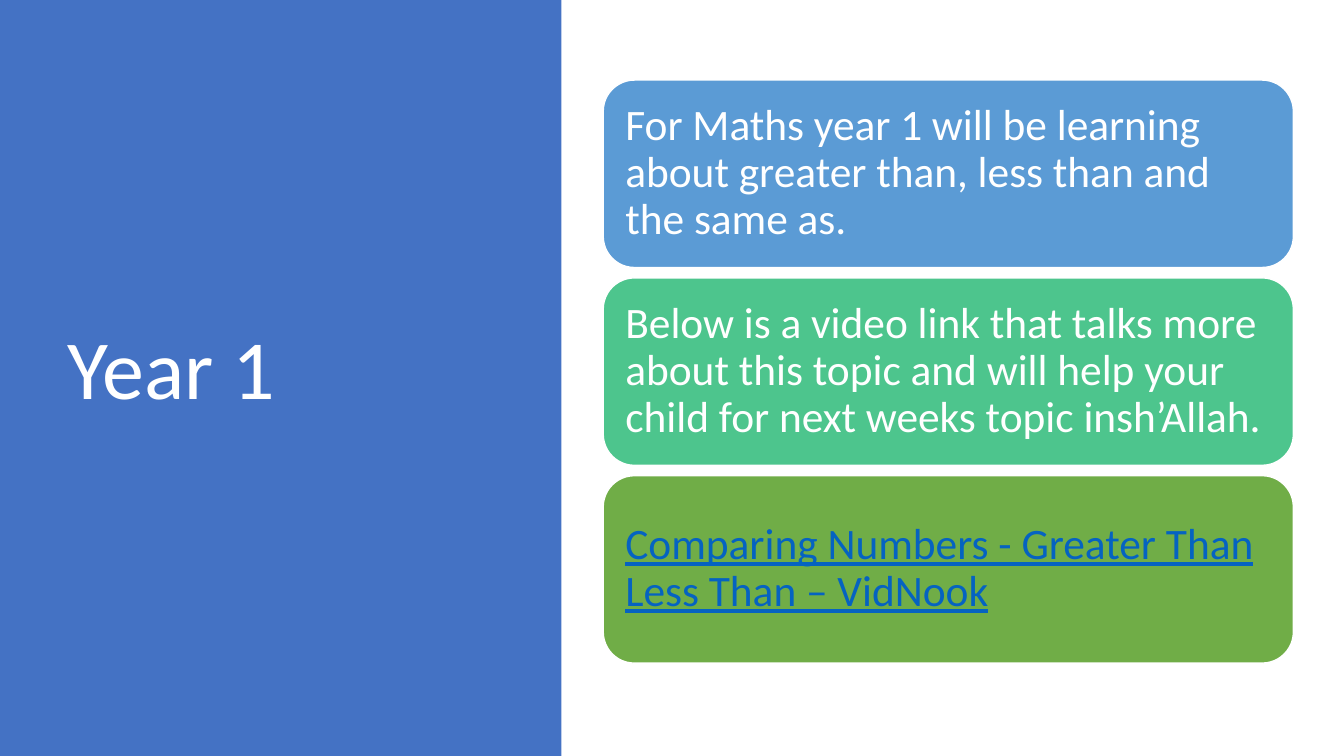
from dataclasses import dataclass

import pptx
import pptx.dml.color
import pptx.enum.shapes
import pptx.enum.text
import pptx.util
from pptx.dml.color import RGBColor
from pptx.util import Pt

WHITE = RGBColor(0xFF, 0xFF, 0xFF)
PANEL_BLUE = RGBColor(0x44, 0x72, 0xC4)
CARD_BLUE = RGBColor(0x5B, 0x9B, 0xD5)
CARD_TEAL = RGBColor(0x4D, 0xC5, 0x8D)
CARD_GREEN = RGBColor(0x70, 0xAD, 0x47)
LINK_BLUE = RGBColor(0x05, 0x63, 0xC1)

FONT_NAME = "Calibri"
SLIDE_WIDTH, SLIDE_HEIGHT = 960, 540
PANEL_WIDTH = 401
CARD_LEFT, CARD_TOP = 430.9, 57.2
CARD_WIDTH, CARD_HEIGHT, CARD_GAP = 493, 133.9, 7.4
CARD_INSET = 9.3


@dataclass(frozen=True)
class Card:
    text: str
    fill: RGBColor
    text_color: RGBColor = WHITE
    underline: bool = False


CARDS = [
    Card("For Maths year 1 will be learning about greater than, less than and the same as.", CARD_BLUE),
    Card(
        "Below is a video link that talks more about this topic and will help your "
        "child for next weeks topic insh’Allah.",
        CARD_TEAL,
    ),
    Card("Comparing Numbers - Greater Than Less Than – VidNook", CARD_GREEN, LINK_BLUE, True),
]


def set_values(target: object, values: dict[str, object]) -> None:
    for name, value in values.items():
        setattr(target, name, value)


def write_text(
    shape: pptx.shapes.base.BaseShape, text: str, size: float, color: RGBColor, underline: bool = False
) -> None:
    frame = shape.text_frame
    frame.text = text
    set_values(frame, {
        "word_wrap": True,
        "auto_size": pptx.enum.text.MSO_AUTO_SIZE.NONE,
        "vertical_anchor": pptx.enum.text.MSO_ANCHOR.MIDDLE,
    })
    paragraph = frame.paragraphs[0]
    set_values(paragraph, {"alignment": pptx.enum.text.PP_ALIGN.LEFT, "line_spacing": 0.9})
    font = paragraph.runs[0].font
    set_values(font, {"name": FONT_NAME, "size": Pt(size), "underline": underline})
    font.color.rgb = color


def add_filled_shape(
    slide: pptx.slide.Slide,
    kind: pptx.enum.shapes.MSO_SHAPE,
    left: float,
    top: float,
    width: float,
    height: float,
    fill: RGBColor,
) -> pptx.shapes.autoshape.Shape:
    shape = slide.shapes.add_shape(kind, Pt(left), Pt(top), Pt(width), Pt(height))
    shape.shadow.inherit = False
    shape.fill.solid()
    shape.fill.fore_color.rgb = fill
    shape.line.fill.background()
    return shape


def add_title_panel(slide: pptx.slide.Slide) -> None:
    panel = add_filled_shape(
        slide, pptx.enum.shapes.MSO_SHAPE.RECTANGLE, 0, 0, PANEL_WIDTH, SLIDE_HEIGHT, PANEL_BLUE
    )
    title = slide.shapes.title
    title.element.addprevious(panel.element)  # keeps the panel behind the title
    set_values(title, {"left": Pt(41), "top": Pt(49), "width": Pt(299.5), "height": Pt(433.4)})
    write_text(title, "Year 1", 60, WHITE)


def add_card(slide: pptx.slide.Slide, card: Card, top: float) -> None:
    shape = add_filled_shape(
        slide, pptx.enum.shapes.MSO_SHAPE.ROUNDED_RECTANGLE,
        CARD_LEFT, top, CARD_WIDTH, CARD_HEIGHT, card.fill,
    )
    set_values(shape.line, {"width": Pt(1)})
    shape.line.color.rgb = WHITE
    write_text(shape, card.text, 31, card.text_color, card.underline)
    sides = ("left", "top", "right", "bottom")
    set_values(shape.text_frame, {f"margin_{side}": Pt(CARD_INSET) for side in sides})


def main() -> None:
    presentation = pptx.Presentation()
    set_values(presentation, {"slide_width": Pt(SLIDE_WIDTH), "slide_height": Pt(SLIDE_HEIGHT)})
    slide = presentation.slides.add_slide(presentation.slide_layouts.get_by_name("Title Only"))
    add_title_panel(slide)
    for index, card in enumerate(CARDS):
        add_card(slide, card, CARD_TOP + index * (CARD_HEIGHT + CARD_GAP))
    presentation.save("out.pptx")


if __name__ == "__main__":
    main()
